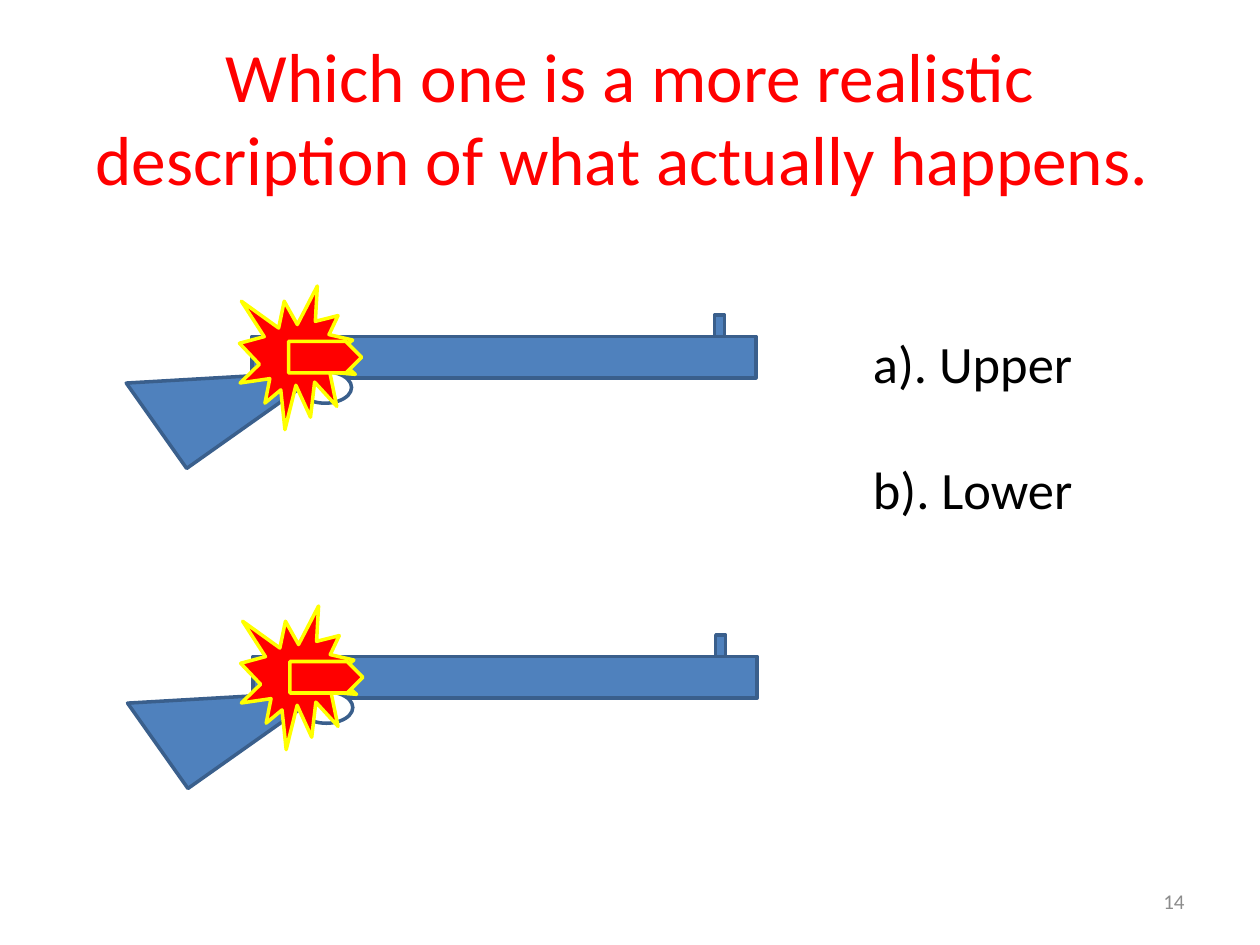
from dataclasses import dataclass

from lxml.etree import SubElement
from pptx import Presentation
from pptx.dml.color import RGBColor as RGB
from pptx.enum.shapes import MSO_CONNECTOR as Link, MSO_SHAPE as Shape
from pptx.enum.text import MSO_ANCHOR as Anchor, PP_ALIGN as Align
from pptx.oxml.ns import qn
from pptx.util import Inches, Pt


@dataclass(frozen=True)
class Theme:
    """Colours, font and type sizes of the slide."""
    font: str = "Calibri"
    steel: RGB = RGB(0x4F, 0x81, 0xBD)
    edge: RGB = RGB(0x3A, 0x5F, 0x8C)
    wire: RGB = RGB(0x4B, 0x7E, 0xBC)
    white: RGB = RGB(255, 255, 255)
    black: RGB = RGB(0, 0, 0)
    red: RGB = RGB(255, 0, 0)
    yellow: RGB = RGB(255, 255, 0)
    gray: RGB = RGB(0x8C, 0x8C, 0x8C)
    title: float = 39.6
    body: float = 30
    small: float = 12
    thick: float = 2
    thin: float = 0.75


THEME = Theme()


def add_text(slide, box, lines, size, color, align=Align.LEFT, anchor=Anchor.TOP, gap=0):
    """Add a text box with one paragraph per line."""
    frame = slide.shapes.add_textbox(*map(Inches, box)).text_frame
    frame.word_wrap = True
    frame.vertical_anchor = anchor
    frame.text = "\n".join(lines)
    for i, para in enumerate(frame.paragraphs):
        para.alignment = align
        para.space_before = Pt(gap if i else 0)
        for run in para.runs:
            run.font.name = THEME.font
            run.font.size = Pt(size)
            run.font.color.rgb = color


def add_part(shapes, kind, box, fill, line, turn=0):
    """Add a filled and outlined preset shape."""
    part = shapes.add_shape(kind, *map(Inches, box))
    part.shadow.inherit = False
    part.fill.solid()
    part.fill.fore_color.rgb = fill
    part.line.color.rgb = line
    part.line.width = Pt(THEME.thick)
    part.rotation = turn


def add_line(shapes, start, end):
    """Add a thin straight line."""
    line = shapes.add_connector(Link.STRAIGHT, *map(Inches, start + end))
    line.line.color.rgb = THEME.wire
    line.line.width = Pt(THEME.thin)
    SubElement(line._element.spPr, qn("a:effectLst"))


def add_gun(slide, x, y):
    """Add a gun with its blast and bullet, placed by the barrel's corner."""
    gun = slide.shapes.add_group_shape().shapes
    steel, edge = THEME.steel, THEME.edge
    add_part(gun, Shape.RECTANGLE, (x, y, 4, 0.33), steel, edge)
    add_part(gun, Shape.RIGHT_TRIANGLE, (x - 0.88, y - 0.09, 1.33, 0.83), steel, edge, 324.7)
    add_part(gun, Shape.RECTANGLE, (x + 3.67, y - 0.17, 0.08, 0.17), steel, edge)
    add_part(gun, Shape.OVAL, (x + 0.37, y + 0.28, 0.42, 0.25), THEME.white, edge)
    add_line(gun, (x + 0.43, y + 0.25), (x + 0.64, y + 0.5))
    red, yellow = THEME.red, THEME.yellow
    add_part(slide.shapes, Shape.EXPLOSION1, (x - 0.1, y - 0.4, 0.92, 1.14), red, yellow)
    add_part(slide.shapes, Shape.PENTAGON, (x + 0.29, y + 0.04, 0.58, 0.25), red, yellow)


def main():
    """Build and save the slide."""
    deck = Presentation()
    deck.slide_width, deck.slide_height = Inches(10), Inches(7.5)
    slide = deck.slides.add_slide(deck.slide_layouts[6])
    add_text(slide, (0.5, 0.3, 9, 1.25),
             ["Which one is a more realistic description of what actually happens. "],
             THEME.title, THEME.red, Align.CENTER, Anchor.MIDDLE)
    for x, y in ((2, 2.67), (2.01, 5.21)):
        add_gun(slide, x, y)
    add_text(slide, (6.83, 2.58, 2.67, 1.62), ["a). Upper", "b). Lower"],
             THEME.body, THEME.black, gap=36)
    add_text(slide, (7.17, 6.95, 2.33, 0.4), ["14"],
             THEME.small, THEME.gray, Align.RIGHT, Anchor.MIDDLE)
    deck.save("out.pptx")


if __name__ == "__main__":
    main()
